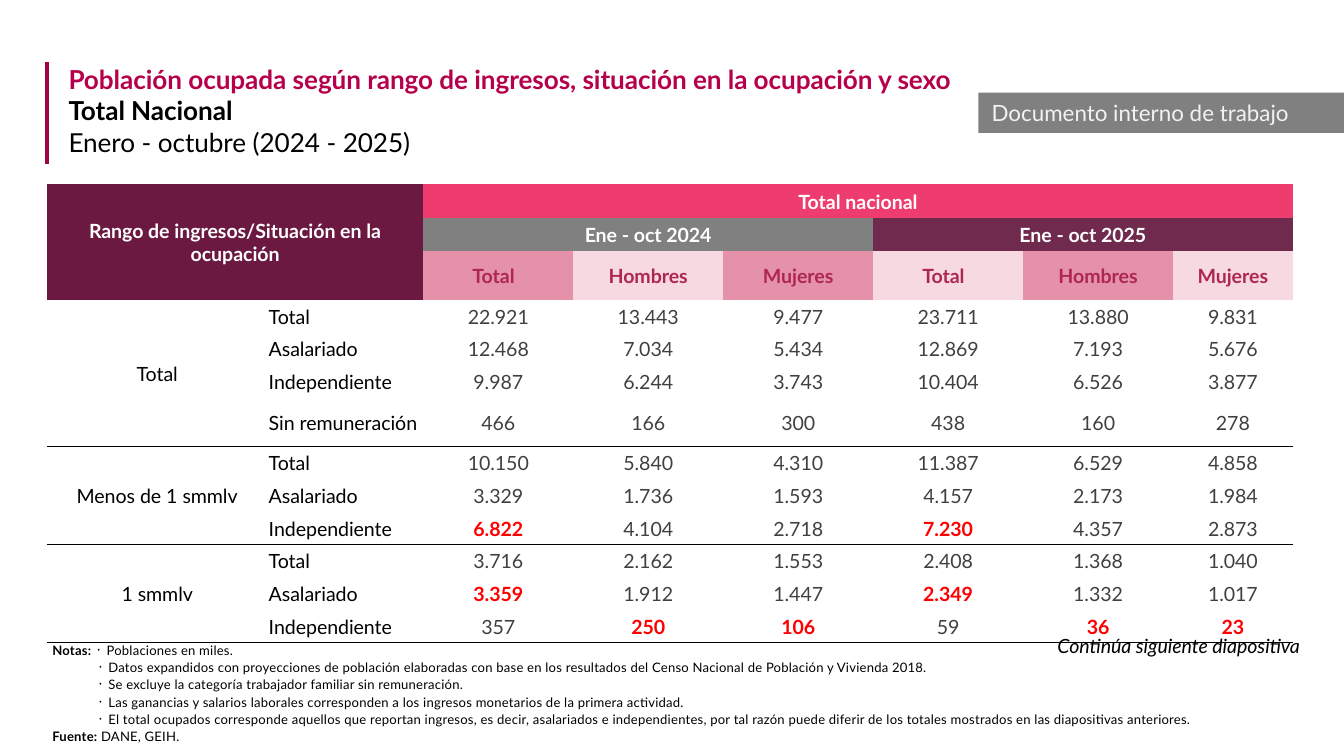
from dataclasses import dataclass

from lxml import etree
from pptx import Presentation
from pptx import util as u
from pptx.dml.color import RGBColor
from pptx.enum import shapes, text
from pptx.oxml import ns


@dataclass(frozen=True)
class Theme:
    font: str = "Lato"
    black: str = "000000"
    white: str = "FFFFFF"
    title: str = "B6004B"
    rule: str = "9C0646"
    gray: str = "808080"
    badge_text: str = "F2F2F2"
    corner: str = "6B1940"
    national: str = "EF3C6F"
    latest: str = "6F2A4D"
    pink: str = "E691AA"
    pale: str = "F7D9E1"
    heading: str = "AD2750"
    figure: str = "404040"
    alert: str = "FF0000"
    title_size: float = 14
    badge_size: float = 12
    table_size: float = 10.5
    note_size: float = 7


theme = Theme()


def style_run(run, size, color, bold=False, italic=False, spacing=0):
    run.font.name = theme.font
    run.font.size = u.Pt(size)
    run.font.bold = bold
    run.font.italic = italic
    run.font.color.rgb = RGBColor.from_string(color)
    if spacing:
        run.font._element.set("spc", str(spacing))


def fill_cell(cell, words, color, fill=None, bold=False, align=text.PP_ALIGN.CENTER):
    cell.text_frame.text = words
    paragraph = cell.text_frame.paragraphs[0]
    paragraph.alignment = align
    style_run(paragraph.runs[0], theme.table_size, color, bold)
    if fill:
        cell.fill.solid()
        cell.fill.fore_color.rgb = RGBColor.from_string(fill)


presentation = Presentation()
presentation.slide_width = u.Inches(10)
presentation.slide_height = u.Inches(10 * 9 / 16)
slide = presentation.slides.add_slide(presentation.slide_layouts[6])

title_box = slide.shapes.add_textbox(u.Inches(0.44), u.Inches(0.43), u.Inches(9.56), u.Inches(0.78))
title_frame = title_box.text_frame
title_frame.word_wrap = True
title_frame.margin_left = title_frame.margin_right = u.Inches(0.07)
title_frame.margin_top = title_frame.margin_bottom = u.Inches(0.04)
title_frame.text = (
    "Población ocupada según rango de ingresos, situación en la ocupación y sexo\n"
    "Total Nacional\n"
    "Enero - octubre (2024 - 2025)"
)
title_styles = [(theme.title, True), (theme.black, True), (theme.black, False)]
for paragraph, (color, bold) in zip(title_frame.paragraphs, title_styles):
    style_run(paragraph.runs[0], theme.title_size, color, bold, spacing=-5)

notes = [
    ("Notas: ", "᛫ Poblaciones en miles."),
    ("", "᛫ Datos expandidos con proyecciones de población elaboradas con base en los resultados del Censo Nacional de Población y Vivienda 2018."),
    ("", "᛫ Se excluye la categoría trabajador familiar sin remuneración."),
    ("", "᛫ Las ganancias y salarios laborales corresponden a los ingresos monetarios de la primera actividad."),
    ("", "᛫ El total ocupados corresponde aquellos que reportan ingresos, es decir, asalariados e independientes, por tal razón puede diferir de los totales mostrados en las diapositivas anteriores."),
    ("Fuente: ", "DANE, GEIH."),
]
notes_box = slide.shapes.add_textbox(u.Inches(0.38), u.Inches(4.74), u.Inches(9.24), u.Inches(0.8))
notes_frame = notes_box.text_frame
notes_frame.word_wrap = True
notes_frame.vertical_anchor = text.MSO_ANCHOR.BOTTOM
notes_frame.margin_left = notes_frame.margin_right = notes_frame.margin_bottom = 0
notes_frame.margin_top = u.Inches(0.01)
for index, (label, words) in enumerate(notes):
    paragraph = notes_frame.add_paragraph() if index else notes_frame.paragraphs[0]
    paragraph.line_spacing = 1.04
    if index:
        paragraph.space_before = u.Pt(0.6)
    properties = paragraph._p.get_or_add_pPr()
    properties.set("marL", str(u.Inches(0.01 if label else 0.34)))
    properties.set("indent", "0")
    for part, bold in ((label, True), (words, False)):
        if part:
            run = paragraph.add_run()
            run.text = part
            style_run(run, theme.note_size, theme.black, bold, spacing=13)

badge = slide.shapes.add_shape(
    shapes.MSO_SHAPE.RECTANGLE, u.Inches(7.28), u.Inches(0.69), u.Inches(2.72), u.Inches(0.3)
)
badge.shadow.inherit = False
badge.fill.solid()
badge.fill.fore_color.rgb = RGBColor.from_string(theme.gray)
badge.line.fill.background()
badge.text_frame.text = "Documento interno de trabajo"
badge_paragraph = badge.text_frame.paragraphs[0]
badge_paragraph.alignment = text.PP_ALIGN.LEFT
style_run(badge_paragraph.runs[0], theme.badge_size, theme.badge_text)

groups = [
    ("Total", [
        ("Total", "22.921 13.443 9.477 23.711 13.880 9.831"),
        ("Asalariado", "12.468 7.034 5.434 12.869 7.193 5.676"),
        ("Independiente", "9.987 6.244 3.743 10.404 6.526 3.877"),
        ("Sin remuneración", "466 166 300 438 160 278"),
    ]),
    ("Menos de 1 smmlv", [
        ("Total", "10.150 5.840 4.310 11.387 6.529 4.858"),
        ("Asalariado", "3.329 1.736 1.593 4.157 2.173 1.984"),
        ("Independiente", "6.822 4.104 2.718 7.230 4.357 2.873"),
    ]),
    ("1 smmlv", [
        ("Total", "3.716 2.162 1.553 2.408 1.368 1.040"),
        ("Asalariado", "3.359 1.912 1.447 2.349 1.332 1.017"),
        ("Independiente", "357 250 106 59 36 23"),
    ]),
]
alerts = {"6.822", "7.230", "3.359", "2.349", "250", "106", "36", "23"}
table_width, table_height = 9.27, 3.3
figure_width = (table_width - 1.64 - 1.16 - 0.89) / 5
record_height = (table_height - 3 * 0.25 - 0.36) / 9
column_widths = [1.64, 1.16] + [figure_width] * 5 + [0.89]
row_heights = [0.25] * 3 + [record_height] * 3 + [0.36] + [record_height] * 6

table_frame = slide.shapes.add_table(
    len(row_heights), len(column_widths),
    u.Inches(0.35), u.Inches(1.37), u.Inches(table_width), u.Inches(table_height),
)
table = table_frame.table
table.first_row = table.horz_banding = False
table._tbl.tblPr.find(ns.qn("a:tableStyleId")).text = "{2D5ABB26-0587-4C30-8999-92F81FD0307C}"
for column, width in zip(table.columns, column_widths):
    column.width = u.Inches(width)
for row, height in zip(table.rows, row_heights):
    row.height = u.Inches(height)
for cell in table.iter_cells():
    cell.margin_left = cell.margin_right = cell.margin_top = u.Inches(0.01)
    cell.margin_bottom = 0
    cell.vertical_anchor = text.MSO_ANCHOR.MIDDLE
    cell.fill.background()

headers = [
    (0, 0, 2, 1, "Rango de ingresos/Situación en la ocupación", theme.corner),
    (0, 2, 0, 7, "Total nacional", theme.national),
    (1, 2, 1, 4, "Ene - oct 2024", theme.gray),
    (1, 5, 1, 7, "Ene - oct 2025", theme.latest),
]
for top, left, bottom, right, words, fill in headers:
    table.cell(top, left).merge(table.cell(bottom, right))
    fill_cell(table.cell(top, left), words, theme.white, fill, bold=True)
for index, words in enumerate(["Total", "Hombres", "Mujeres"] * 2):
    cell = table.cell(2, index + 2)
    fill_cell(cell, words, theme.heading, theme.pale if index % 2 else theme.pink, bold=True)
    if words == "Total":
        cell.margin_right = u.Inches(0.08)

first = 3
for group, records in groups:
    last = first + len(records) - 1
    table.cell(first, 0).merge(table.cell(last, 0))
    fill_cell(table.cell(first, 0), group, theme.black)
    for row, (label, figures) in enumerate(records, first):
        fill_cell(table.cell(row, 1), label, theme.black, align=text.PP_ALIGN.LEFT)
        for column, figure in enumerate(figures.split(), 2):
            alert = figure in alerts
            fill_cell(table.cell(row, column), figure, theme.alert if alert else theme.figure, bold=alert)
    for cell in [table.cell(first, 0)] + list(table.rows[last].cells):
        border = etree.Element(ns.qn("a:lnB"), w=str(u.Pt(0.5)))
        border_fill = etree.SubElement(border, ns.qn("a:solidFill"))
        etree.SubElement(border_fill, ns.qn("a:srgbClr"), val=theme.black)
        cell._tc.get_or_add_tcPr().insert(0, border)
    first = last + 1

continuation = slide.shapes.add_textbox(u.Inches(7.77), u.Inches(4.67), u.Inches(2.23), u.Inches(0.29))
continuation.text_frame.word_wrap = True
continuation.text_frame.text = "Continúa siguiente diapositiva"
style_run(continuation.text_frame.paragraphs[0].runs[0], theme.table_size, theme.black, italic=True)

title_rule = slide.shapes.add_connector(
    shapes.MSO_CONNECTOR.STRAIGHT, u.Inches(0.35), u.Inches(1.22), u.Inches(0.35), u.Inches(0.46)
)
title_rule.line.color.rgb = RGBColor.from_string(theme.rule)
title_rule.line.width = u.Pt(2)
etree.SubElement(title_rule._element.spPr, ns.qn("a:effectLst"))

presentation.save("out.pptx")
